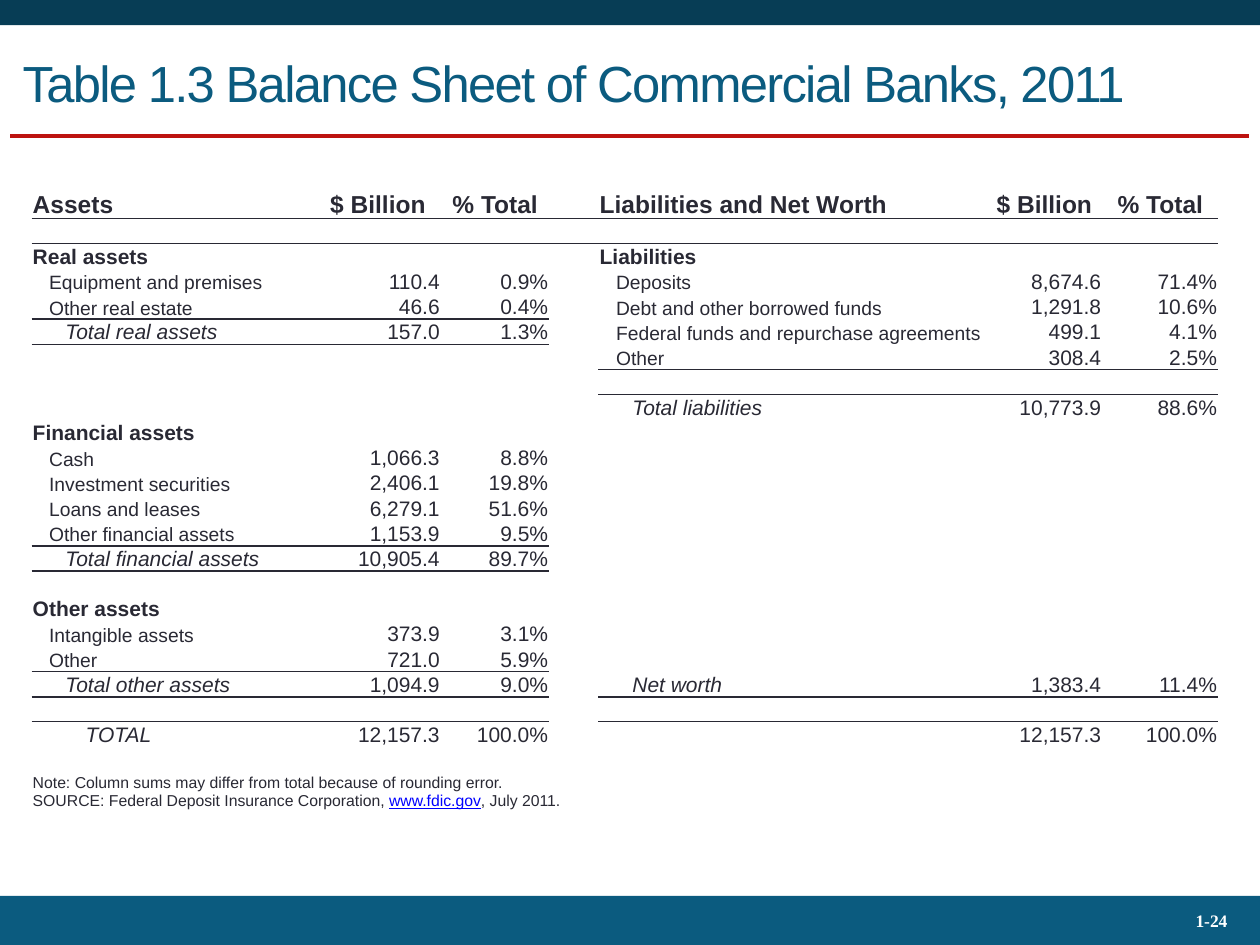
import pptx
import pptx.util
import pptx.dml.color
import pptx.enum.shapes
import pptx.enum.text
import pptx.oxml.ns
import lxml.etree

Inches, Pt = pptx.util.Inches, pptx.util.Pt
RGBColor = pptx.dml.color.RGBColor
PP_ALIGN = pptx.enum.text.PP_ALIGN
ANCHOR = pptx.enum.text.MSO_ANCHOR
qn = pptx.oxml.ns.qn

WHITE = RGBColor(0xFF, 0xFF, 0xFF)
NAVY = RGBColor(0x07, 0x3D, 0x55)
TEAL = RGBColor(0x0B, 0x5B, 0x7F)
RED = RGBColor(0xBD, 0x13, 0x0F)
INK = RGBColor(0x29, 0x29, 0x34)
LINK = RGBColor(0x00, 0x00, 0xFF)
NO_STYLE = "{2D5ABB26-0587-4C30-8999-92F81FD0307C}"

# Label styles: size, bold, italic, indent in inches
STYLES = {
    "group": (12, True, False, 0.01),
    "item": (11, False, False, 0.14),
    "subtotal": (12, False, True, 0.27),
    "total": (12, False, True, 0.43),
}
COLUMN_WIDTHS = (2.25, 1, 0.86, 0.39, 3.08, 0.92, 0.92)
HEADINGS = ("Assets", "$ Billion", "% Total", "",
            "Liabilities and Net Worth", "$ Billion", "% Total")
ROW_COUNT = 24
NOTE_ROW = ROW_COUNT - 1

# Entries by table row: style, label, $ billion, % of total
ASSETS = {
    2: ("group", "Real assets", "", ""),
    3: ("item", "Equipment and premises", "110.4", "0.9%"),
    4: ("item", "Other real estate", "46.6", "0.4%"),
    5: ("subtotal", "Total real assets", "157.0", "1.3%"),
    9: ("group", "Financial assets", "", ""),
    10: ("item", "Cash", "1,066.3", "8.8%"),
    11: ("item", "Investment securities", "2,406.1", "19.8%"),
    12: ("item", "Loans and leases", "6,279.1", "51.6%"),
    13: ("item", "Other financial assets", "1,153.9", "9.5%"),
    14: ("subtotal", "Total financial assets", "10,905.4", "89.7%"),
    16: ("group", "Other assets", "", ""),
    17: ("item", "Intangible assets", "373.9", "3.1%"),
    18: ("item", "Other", "721.0", "5.9%"),
    19: ("subtotal", "Total other assets", "1,094.9", "9.0%"),
    21: ("total", "TOTAL", "12,157.3", "100.0%"),
}
LIABILITIES = {
    2: ("group", "Liabilities", "", ""),
    3: ("item", "Deposits", "8,674.6", "71.4%"),
    4: ("item", "Debt and other borrowed funds", "1,291.8", "10.6%"),
    5: ("item", "Federal funds and repurchase agreements", "499.1", "4.1%"),
    6: ("item", "Other", "308.4", "2.5%"),
    8: ("subtotal", "Total liabilities", "10,773.9", "88.6%"),
    19: ("subtotal", "Net worth", "1,383.4", "11.4%"),
    21: ("total", "", "12,157.3", "100.0%"),
}
# First column of each side, its entries and its ruled rows
SIDES = ((0, ASSETS, (4, 13, 18, 19)), (4, LIABILITIES, (6, 19)))


def set_font(font, size, color=INK, bold=False, italic=False, name="Arial"):
    font.name, font.size = name, Pt(size)
    font.bold, font.italic = bold, italic
    font.color.rgb = color


def add_band(slide, left, top, width, height, color):
    band = slide.shapes.add_shape(pptx.enum.shapes.MSO_SHAPE.RECTANGLE,
                                  left, top, width, height)
    band.shadow.inherit = False
    band.fill.solid()
    band.fill.fore_color.rgb = color
    band.line.fill.background()


def add_title_rule(slide, left, top, width):
    rule = slide.shapes.add_connector(pptx.enum.shapes.MSO_CONNECTOR.STRAIGHT,
                                      left, top, left + width, top)
    rule.line.color.rgb = RED
    rule.line.width = Pt(2.25)
    lxml.etree.SubElement(rule._element.spPr, qn("a:effectLst"))


def add_page_number(slide, left, top, width, height):
    frame = slide.shapes.add_textbox(left, top, width, height).text_frame
    frame.word_wrap = True
    frame.vertical_anchor = ANCHOR.MIDDLE
    number = frame.paragraphs[0]
    number.text = "1-24"
    number.alignment = PP_ALIGN.RIGHT
    set_font(number.font, 10, WHITE, bold=True, name="Times New Roman")


def place_title(slide, left, top, width, height):
    title = slide.shapes.title
    title.left, title.top, title.width, title.height = left, top, width, height
    title.text_frame.vertical_anchor = ANCHOR.MIDDLE
    heading = title.text_frame.paragraphs[0]
    heading.alignment = PP_ALIGN.LEFT
    run = heading.add_run()
    run.text = "Table 1.3 Balance Sheet of Commercial Banks, 2011"
    set_font(run.font, 29, TEAL)
    run.font._element.set("spc", "-100")


def fill_cell(cell, text, size, bold=False, italic=False,
              align=PP_ALIGN.LEFT, indent=0.01):
    cell.margin_left = Inches(indent)
    entry = cell.text_frame.paragraphs[0]
    entry.text = text
    entry.alignment = align
    set_font(entry.font, size, bold=bold, italic=italic)


def rule_below(table, row, columns):
    for column in columns:
        for edge, edge_row in (("a:lnB", row), ("a:lnT", row + 1)):
            properties = table.cell(edge_row, column)._tc.get_or_add_tcPr()
            line = lxml.etree.Element(qn(edge), w=str(Pt(1)))
            fill = lxml.etree.SubElement(line, qn("a:solidFill"))
            lxml.etree.SubElement(fill, qn("a:srgbClr"), val=str(INK))
            # Top edges come before bottom edges, and both before the fill
            has_top = properties.find(qn("a:lnT")) is not None
            properties.insert(int(has_top), line)


def fill_note(table):
    cell = table.cell(NOTE_ROW, 0)
    cell.merge(table.cell(NOTE_ROW, len(COLUMN_WIDTHS) - 1))
    fill_cell(cell, "Note: Column sums may differ from total because of "
                    "rounding error.", 9)
    source = cell.text_frame.add_paragraph()
    set_font(source.font, 9)
    for text in ("SOURCE: Federal Deposit Insurance Corporation, ",
                 "www.fdic.gov", ", July 2011."):
        run = source.add_run()
        run.text = text
        if text.startswith("www"):
            run.font.color.rgb = LINK
            run.font.underline = True


def add_balance_sheet(slide, left, top, width, height):
    frame = slide.shapes.add_table(ROW_COUNT, len(COLUMN_WIDTHS),
                                   left, top, width, height)
    table = frame.table
    table.first_row = table.horz_banding = False
    table._tbl.tblPr.find(qn("a:tableStyleId")).text = NO_STYLE
    for column, column_width in zip(table.columns, COLUMN_WIDTHS):
        column.width = Inches(column_width)
    for row in table.rows:
        row.height = Pt(14.2)
    table.rows[0].height = Inches(0.22)
    table.rows[NOTE_ROW].height = Inches(0.3)

    # Plain cells, small enough for the narrow rows
    for cell in table.iter_cells():
        cell.fill.background()
        cell.vertical_anchor = ANCHOR.BOTTOM
        cell.margin_right = Inches(0.01)
        cell.margin_top = cell.margin_bottom = 0
        fill_cell(cell, "", 9)

    # Headings
    for column, heading in enumerate(HEADINGS):
        if heading:
            is_value = heading.startswith(("$", "%"))
            fill_cell(table.cell(0, column), heading, 14, bold=True,
                      align=PP_ALIGN.CENTER if is_value else PP_ALIGN.LEFT)
    rule_below(table, 0, range(len(COLUMN_WIDTHS)))

    # Both sides of the sheet
    for first, entries, ruled_rows in SIDES:
        for row, (style, label, *values) in entries.items():
            size, bold, italic, indent = STYLES[style]
            if label:
                fill_cell(table.cell(row, first), label, size, bold, italic,
                          indent=indent)
            for column, value in enumerate(values, first + 1):
                if value:
                    fill_cell(table.cell(row, column), value, 12,
                              align=PP_ALIGN.RIGHT)
        for row in ruled_rows:
            rule_below(table, row, range(first, first + 3))
    fill_note(table)


def main():
    deck = pptx.Presentation()
    deck.slide_width, deck.slide_height = Inches(10), Inches(7.5)
    slide = deck.slides.add_slide(deck.slide_layouts[5])
    add_band(slide, 0, 0, Inches(10), Inches(0.2), NAVY)
    add_title_rule(slide, Inches(0.08), Inches(1.08), Inches(9.83))
    add_band(slide, 0, Inches(7.11), Inches(10), Inches(0.4), TEAL)
    add_page_number(slide, Inches(8.67), Inches(7.13), Inches(1.17), Inches(0.36))
    place_title(slide, Inches(0.08), Inches(0.2), Inches(9.92), Inches(0.91))
    add_balance_sheet(slide, Inches(0.25), Inches(1.5), Inches(9.42), Inches(5.11))
    deck.save("out.pptx")


if __name__ == "__main__":
    main()
